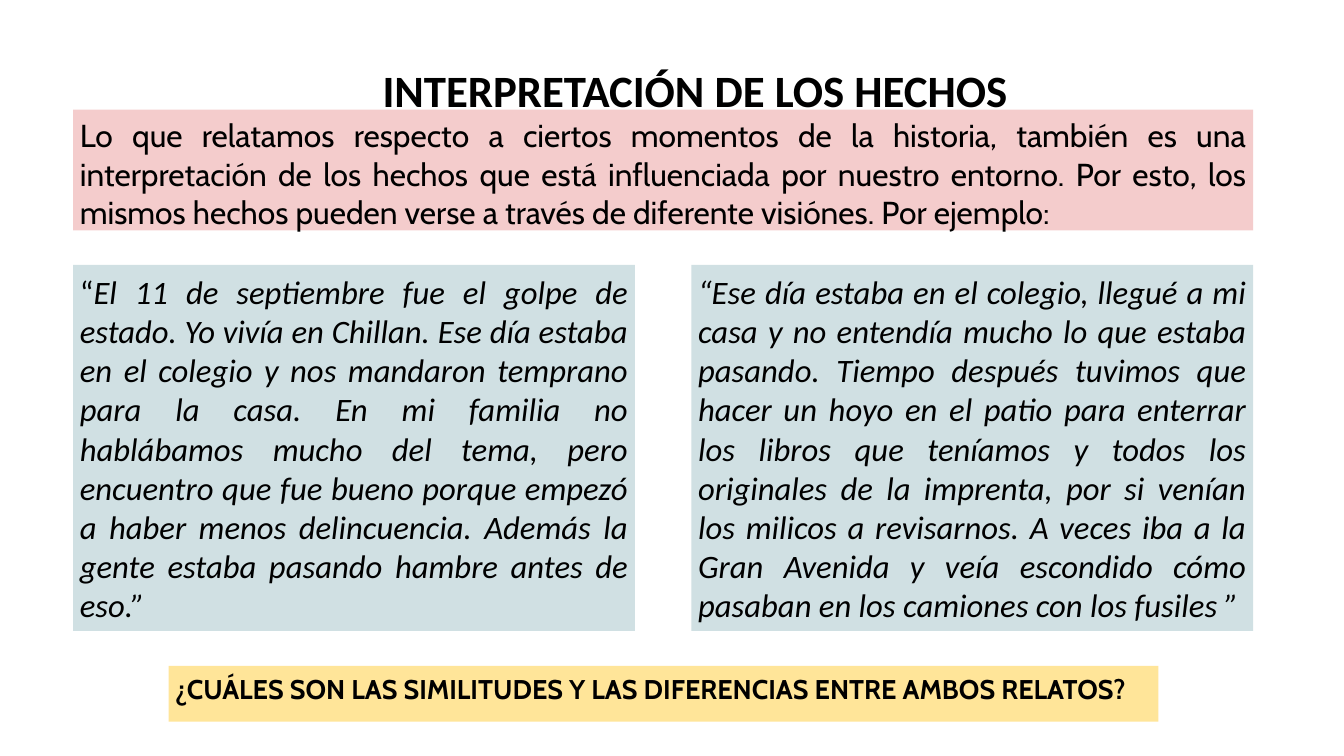
from pptx import Presentation
from pptx.dml.color import RGBColor
from pptx.enum.shapes import MSO_SHAPE as Shape
from pptx.enum.text import MSO_ANCHOR as Anchor, PP_ALIGN as Align
from pptx.util import Inches, Pt


def color(value):
    return RGBColor.from_string(value)


def write(box, margin, align, spacing, spans, style):
    frame = box.text_frame
    margins = {f"margin_{side}": Inches(margin) for side in ("left", "top", "right", "bottom")}
    for name, value in {"word_wrap": True, "vertical_anchor": Anchor.TOP, **margins}.items():
        setattr(frame, name, value)
    para = frame.paragraphs[0]
    para.alignment = align
    para.line_spacing = spacing
    for text, extra in spans:
        span = para.add_run()
        span.text = text
        for name, value in {**style, **extra}.items():
            setattr(span.font, name, value)
        span.font.color.rgb = color("000000")


deck = Presentation()
deck.slide_width = Inches(20)
deck.slide_height = Inches(11.25)
page = deck.slides.add_slide(deck.slide_layouts[6])

title = page.shapes.add_textbox(Inches(0.8), Inches(0.62), Inches(19.09), Inches(1.8))
write(title, 0, Align.CENTER, 1.4, [("INTERPRETACIÓN DE LOS HECHOS", {})],
      {"name": "Calibri", "size": Pt(48), "bold": True})

left, full_width, story_width = 1.09, 17.56, 8.36
right_story = left + full_width - story_width
italic = {"italic": True}
story_style = {"name": "Calibri", "size": Pt(35)}

first_story = [
    ("“", {}),
    ("El 11 de septiembre fue el golpe de estado. Yo vivía en Chillan. Ese día estaba "
     "en el colegio y nos mandaron temprano para la casa. En mi familia no hablábamos "
     "mucho del tema, pero encuentro que fue bueno porque empezó a haber menos "
     "delincuencia. Además la gente estaba pasando hambre antes de eso.”", italic),
]
second_story = [
    ("“Ese día estaba en el colegio, llegué a mi casa y no entendía mucho lo que estaba "
     "pasando. Tiempo después tuvimos que hacer un hoyo en el patio para enterrar los "
     "libros que teníamos y todos los originales de la imprenta, por si venían los "
     "milicos a revisarnos. A veces iba a la Gran Avenida y veía escondido cómo pasaban "
     "en los camiones con los fusiles ”", italic),
]
introduction = [
    ("Lo que relatamos respecto a ciertos momentos de la historia, también es una "
     "interpretación de los hechos que está influenciada por nuestro entorno. Por esto, "
     "los mismos hechos pueden verse a través de diferente visiónes. Por ejemplo:", {}),
]
question = [("¿CUÁLES SON LAS SIMILITUDES Y LAS DIFERENCIAS ENTRE AMBOS RELATOS?", {})]

panels = [
    ((left, 3.94, story_width, 5.45), "D0E0E3", Align.JUSTIFY, first_story, story_style),
    ((right_story, 3.94, story_width, 5.45), "D0E0E3", Align.JUSTIFY, second_story, story_style),
    ((left, 1.63, full_width, 1.8), "F4CCCC", Align.JUSTIFY, introduction,
     {"name": "Cabin", "size": Pt(34)}),
    ((2.51, 9.91, 14.73, 0.83), "FFE599", Align.LEFT, question,
     {"name": "Cabin", "size": Pt(29), "bold": True}),
]
for place, fill, align, spans, style in panels:
    box = page.shapes.add_shape(Shape.RECTANGLE, *map(Inches, place))
    box.shadow.inherit = False
    box.fill.solid()
    box.fill.fore_color.rgb = color(fill)
    box.line.fill.background()
    write(box, 0.1, align, 1.0, spans, style)

deck.save("out.pptx")
